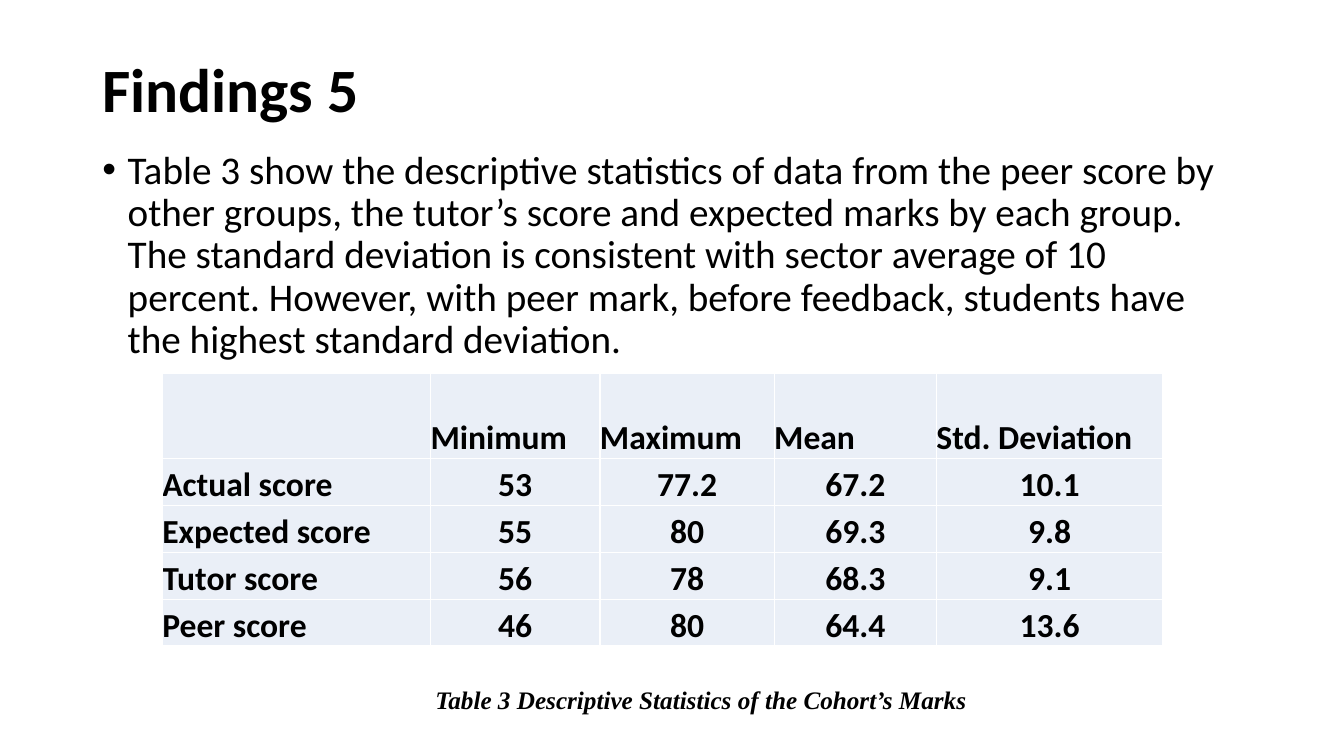
"""Build the "Findings 5" slide with its table of descriptive statistics."""
from lxml.etree import SubElement
from pptx import Presentation
from pptx.dml.color import RGBColor
from pptx.enum.text import MSO_ANCHOR as Anchor, PP_ALIGN as Align
from pptx.oxml.ns import qn
from pptx.util import Cm, Pt

BLACK = RGBColor(0x00, 0x00, 0x00)
WHITE = RGBColor(0xFF, 0xFF, 0xFF)
PALE_BLUE = RGBColor(0xEA, 0xEF, 0xF7)


def style(paragraph, size, bold=False, italic=False, face="Calibri"):
    font = paragraph.font
    font.name, font.size, font.bold, font.italic = face, Pt(size), bold, italic
    font.color.rgb = BLACK


def add_text(text, left, top, width, height, anchor=Anchor.TOP):
    frame = slide.shapes.add_textbox(Cm(left), Cm(top), Cm(width), Cm(height)).text_frame
    frame.word_wrap = True
    frame.vertical_anchor = anchor
    frame.text = text
    return frame.paragraphs[0]


prs = Presentation()
prs.slide_width, prs.slide_height = Cm(33.87), Cm(19.05)
slide = prs.slides.add_slide(prs.slide_layouts[6])

heading = add_text("Findings 5", 2.33, 1.01, 29.21, 2.65, Anchor.MIDDLE)
heading.line_spacing = 0.9
style(heading, 44, bold=True)

finding = add_text(
    "Table 3 show the descriptive statistics of data from the peer score by other groups, "
    "the tutor’s score and expected marks by each group. The standard deviation is consistent "
    "with sector average of 10 percent. However, with peer mark, before feedback, students "
    "have the highest standard deviation.",
    2.33, 3.66, 29.21, 15.75)
finding.line_spacing = 0.9
finding.space_before = Pt(10)
style(finding, 28)
bullet_props = finding._p.get_or_add_pPr()
bullet_props.set("marL", str(Cm(0.64)))
bullet_props.set("indent", str(Cm(-0.64)))
SubElement(bullet_props, qn("a:buFont"), typeface="Arial")
SubElement(bullet_props, qn("a:buChar"), char="•")
bullet_props.append(bullet_props.find(qn("a:defRPr")))

scores = [
    ("", "Minimum", "Maximum", "Mean", "Std. Deviation"),
    ("Actual score", "53", "77.2", "67.2", "10.1"),
    ("Expected score", "55", "80", "69.3", "9.8"),
    ("Tutor score", "56", "78", "68.3", "9.1"),
    ("Peer score", "46", "80", "64.4", "13.6"),
]
column_widths = [6.76, 4.27, 4.39, 4.09, 5.71]
row_heights = [2.16] + [1.18] * 4
table = slide.shapes.add_table(
    len(scores), len(column_widths), Cm(4.09), Cm(9.4),
    Cm(sum(column_widths)), Cm(sum(row_heights))).table
for column, width in zip(table.columns, column_widths):
    column.width = Cm(width)
for row, height in zip(table.rows, row_heights):
    row.height = Cm(height)

for r, values in enumerate(scores):
    for c, value in enumerate(values):
        cell = table.cell(r, c)
        cell.text = value
        cell.margin_left = cell.margin_right = cell.margin_top = cell.margin_bottom = 0
        entry = cell.text_frame.paragraphs[0]
        entry.line_spacing = 1.15
        style(entry, 24, bold=True)
        if r == 0:
            cell.vertical_anchor = Anchor.BOTTOM
            entry.space_after = Pt(8)
        elif c > 0:
            cell.vertical_anchor = Anchor.MIDDLE
            entry.alignment = Align.CENTER
        cell_props = cell._tc.get_or_add_tcPr()
        for side in ("lnL", "lnR", "lnT", "lnB"):
            border = SubElement(cell_props, qn(f"a:{side}"), w=str(Pt(1)))
            SubElement(SubElement(border, qn("a:solidFill")), qn("a:srgbClr"), val=str(WHITE))
        cell.fill.solid()
        cell.fill.fore_color.rgb = PALE_BLUE

caption = add_text("Table 3 Descriptive Statistics of the Cohort’s Marks", 9.09, 17.12, 17.15, 1.02)
caption.alignment = Align.CENTER
caption.space_after = Pt(10)
style(caption, 18, bold=True, italic=True, face="Times New Roman")

prs.save("out.pptx")
